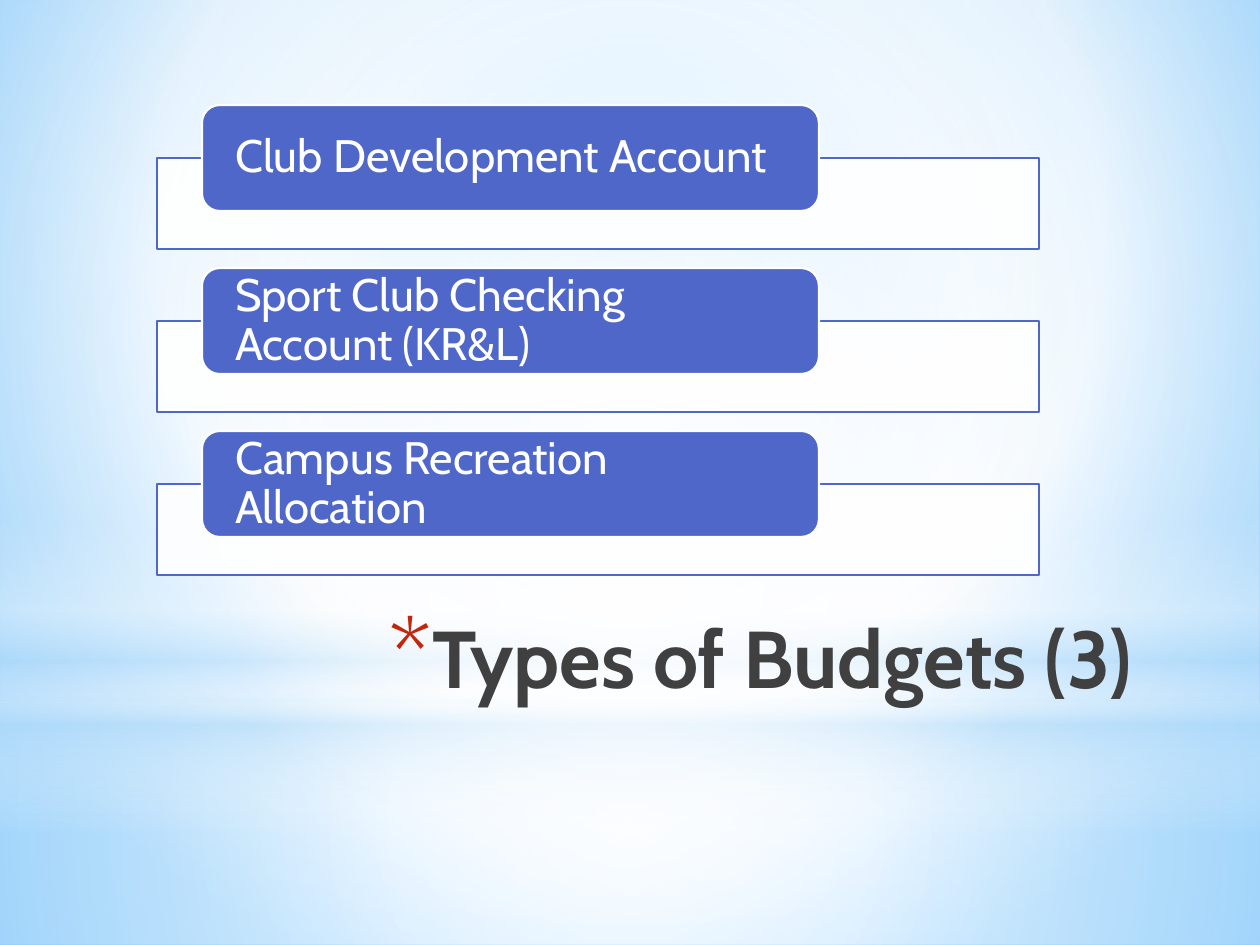
"""Build the slide on the three types of club budgets."""
from lxml import etree
from pptx import Presentation
from pptx.dml.color import RGBColor
from pptx.enum.shapes import MSO_SHAPE
from pptx.enum.text import MSO_ANCHOR, MSO_AUTO_SIZE, PP_ALIGN
from pptx.oxml.ns import qn
from pptx.util import Emu, Pt

RECT, ROUND, OVAL = MSO_SHAPE.RECTANGLE, MSO_SHAPE.ROUNDED_RECTANGLE, MSO_SHAPE.OVAL
TOP, MIDDLE = MSO_ANCHOR.TOP, MSO_ANCHOR.MIDDLE
LEFT, RIGHT = PP_ALIGN.LEFT, PP_ALIGN.RIGHT
NO_FIT = MSO_AUTO_SIZE.NONE

FONT = "Cabin"
COLORS = {
    "white": "FFFFFF",
    "sky": "9ED5FF",
    "azure": "5BB9FF",
    "mist": "B4DCFA",
    "indigo": "4E67C8",
    "red": "C3260C",
    "charcoal": "404040",
}
CENTER = (50, 50, 50, 50)
SKY_STOPS = [(0, "sky", 100), (60, "white", 100), (100, "azure", 100)]
BACKDROP = [
    (RECT, (0, 703, 1260, 242), CENTER,
     [(0, "white", 91), (37, "white", 76), (100, "mist", 79)]),
    (RECT, (0, 0, 1260, 703), CENTER,
     [(0, "white", 89), (48, "white", 62), (100, "mist", 79)]),
    (RECT, (0, 519, 1260, 315), None,
     [(0, "white", 0), (29, "white", 30), (45, "mist", 40),
      (55, "white", 26), (65, "mist", 60), (100, "white", 0)]),
    (OVAL, (0, 221, 1260, 703), CENTER, [(0, "white", 100), (56, "white", 0)]),
]
BUDGETS = [
    "Club Development Account",
    "Sport Club Checking Account (KR&L)",
    "Campus Recreation Allocation",
]
FIRST_TOP, ROW_PITCH, TAB_RISE = 158, 163, 53


def px(n):
    """Turn pixels into EMU."""
    return Emu(round(n * 914400 / 126))


def rgb(name):
    """Return the named colour."""
    return RGBColor.from_string(COLORS[name])


def sub(parent, tag, **attrs):
    """Append a DrawingML child with the given attributes."""
    return etree.SubElement(parent, qn(tag), {k: str(v) for k, v in attrs.items()})


def set_gradient(fill, element, stops, focus):
    """Fill with a circular gradient around focus, or a vertical one without it."""
    fill.gradient()
    grad = next(element.iter(qn("a:gradFill")))
    grad.clear()
    gs_list = sub(grad, "a:gsLst")
    for pos, color, alpha in stops:
        gs = sub(gs_list, "a:gs", pos=pos * 1000)
        clr = sub(gs, "a:srgbClr", val=COLORS[color])
        if alpha < 100:
            sub(clr, "a:alpha", val=alpha * 1000)
    if focus:
        edges = {side: v * 1000 for side, v in zip("ltrb", focus)}
        sub(sub(grad, "a:path", path="circle"), "a:fillToRect", **edges)
    else:
        sub(grad, "a:lin", ang=5400000, scaled=0)


def add_box(shapes, kind, box, fill=None, line=None):
    """Add a shadowless preset shape with a plain fill and line."""
    sp = shapes.add_shape(kind, *map(px, box))
    sp.shadow.inherit = False
    if fill:
        sp.fill.solid()
        sp.fill.fore_color.rgb = rgb(fill)
    if line:
        sp.line.color.rgb = rgb(line)
        sp.line.width = Pt(1.25)
    else:
        sp.line.fill.background()
    return sp


def set_text(sp, text, size, color, align, anchor):
    """Write one formatted paragraph into a shape and return it."""
    tf = sp.text_frame
    tf.text = text
    tf.word_wrap = True
    tf.auto_size = NO_FIT
    tf.vertical_anchor = anchor
    p = tf.paragraphs[0]
    p.alignment = align
    p.font.name = FONT
    p.font.size = Pt(size)
    p.font.color.rgb = rgb(color)
    return p


def add_backdrop(s):
    """Paint the sky background and its layers of light."""
    set_gradient(s.background.fill, s.element, SKY_STOPS, (20, 10, 20, 60))
    for kind, box, focus, stops in BACKDROP:
        sp = add_box(s.shapes, kind, box)
        set_gradient(sp.fill, sp.element, stops, focus)


def add_title(s, text):
    """Format the title with its red asterisk and bring it above the backdrop."""
    title = s.shapes.title
    title.left, title.top, title.width, title.height = map(px, (247, 602, 897, 158))
    p = set_text(title, text, 46, "charcoal", RIGHT, TOP)
    p.font.bold = True
    pPr = p._p.get_or_add_pPr()
    pPr.set("marL", str(px(44)))
    pPr.set("indent", str(-px(44)))
    bullet = [
        etree.Element(qn("a:buClr")),
        etree.Element(qn("a:buSzPct"), val="128000"),
        etree.Element(qn("a:buFont"), typeface=FONT),
        etree.Element(qn("a:buChar"), char="*"),
    ]
    sub(bullet[0], "a:srgbClr", val=COLORS["red"])
    for i, part in enumerate(bullet):
        pPr.insert(i, part)
    title.element.getparent().append(title.element)


def add_budget(shapes, top, text):
    """Add one outlined panel with its labelled tab."""
    panel = add_box(shapes, RECT, (157, top, 882, 91), "white", "indigo")
    clr = next(panel.element.spPr.iter(qn("a:srgbClr")))
    sub(clr, "a:alpha", val=90000)
    tab = add_box(shapes, ROUND, (202, top - TAB_RISE, 617, 106), "indigo", "white")
    p = set_text(tab, text, 26, "white", LEFT, MIDDLE)
    p.line_spacing = 0.9
    tf = tab.text_frame
    tf.margin_left = tf.margin_right = px(28)
    tf.margin_top = tf.margin_bottom = 0


def main():
    """Build and save the slide."""
    prs = Presentation()
    prs.slide_width, prs.slide_height = px(1260), px(945)
    s = prs.slides.add_slide(prs.slide_layouts[5])
    add_backdrop(s)
    add_title(s, "Types of Budgets (3)")
    group = s.shapes.add_group_shape()
    for i, text in enumerate(BUDGETS):
        add_budget(group.shapes, FIRST_TOP + i * ROW_PITCH, text)
    prs.save("out.pptx")


if __name__ == "__main__":
    main()
